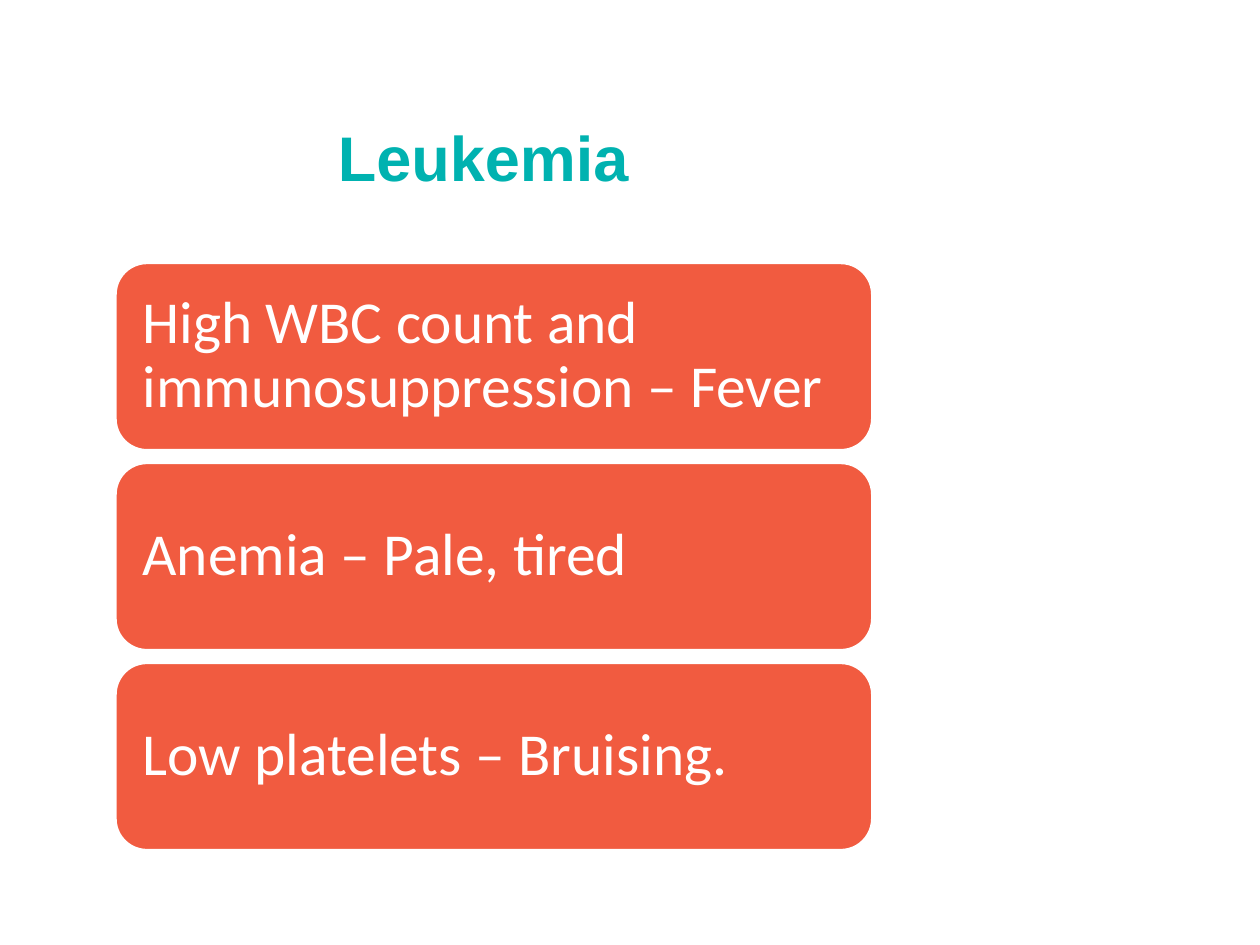
from typing import NamedTuple

from pptx import Presentation
from pptx.dml.color import RGBColor
from pptx.enum import shapes, text
from pptx.util import Inches, Pt

TEAL = RGBColor(0x00, 0xB2, 0xB0)
CORAL = RGBColor(0xF1, 0x5B, 0x40)
WHITE = RGBColor(0xFF, 0xFF, 0xFF)

CARD_LEFT, CARD_TOP = 0.92, 2.09
CARD_WIDTH, CARD_HEIGHT = 6, 1.48
CARD_PITCH = 1.587


class Card(NamedTuple):
    label: str
    top: float


LABELS = (
    "High WBC count and immunosuppression – Fever",
    "Anemia – Pale, tired",
    "Low platelets – Bruising.",
)
CARDS = [Card(label, CARD_TOP + i * CARD_PITCH) for i, label in enumerate(LABELS)]


def write(sp, words: str, *, font: str, size: float, color: RGBColor,
          align, bold: bool = False, inset: tuple = (0.1, 0.05)) -> None:
    tf = sp.text_frame
    tf.word_wrap = True
    tf.vertical_anchor = text.MSO_ANCHOR.MIDDLE
    tf.margin_left = tf.margin_right = Inches(inset[0])
    tf.margin_top = tf.margin_bottom = Inches(inset[1])
    p = tf.paragraphs[0]
    p.alignment = align
    p.line_spacing = 0.9
    r = p.add_run()
    r.text = words
    r.font.name = font
    r.font.size = Pt(size)
    r.font.bold = bold
    r.font.color.rgb = color


def add_title(s, words: str) -> None:
    sp = s.shapes.add_textbox(Inches(1.92), Inches(0.95), Inches(3.83), Inches(0.66))
    write(sp, words, font="Arial", size=36, color=TEAL,
          align=text.PP_ALIGN.CENTER, bold=True)


def add_card(s, card: Card) -> None:
    sp = s.shapes.add_shape(
        shapes.MSO_SHAPE.ROUNDED_RECTANGLE, Inches(CARD_LEFT), Inches(card.top),
        Inches(CARD_WIDTH), Inches(CARD_HEIGHT))
    sp.shadow.inherit = False
    sp.fill.solid()
    sp.fill.fore_color.rgb = CORAL
    sp.line.color.rgb = WHITE
    sp.line.width = Pt(1)
    write(sp, card.label, font="Calibri", size=34, color=WHITE,
          align=text.PP_ALIGN.LEFT, inset=(0.14, 0.14))


def main() -> None:
    prs = Presentation()
    prs.slide_width, prs.slide_height = Inches(10), Inches(7.5)
    s = prs.slides.add_slide(prs.slide_layouts[6])
    add_title(s, "Leukemia")
    for card in CARDS:
        add_card(s, card)
    prs.save("out.pptx")


if __name__ == "__main__":
    main()
